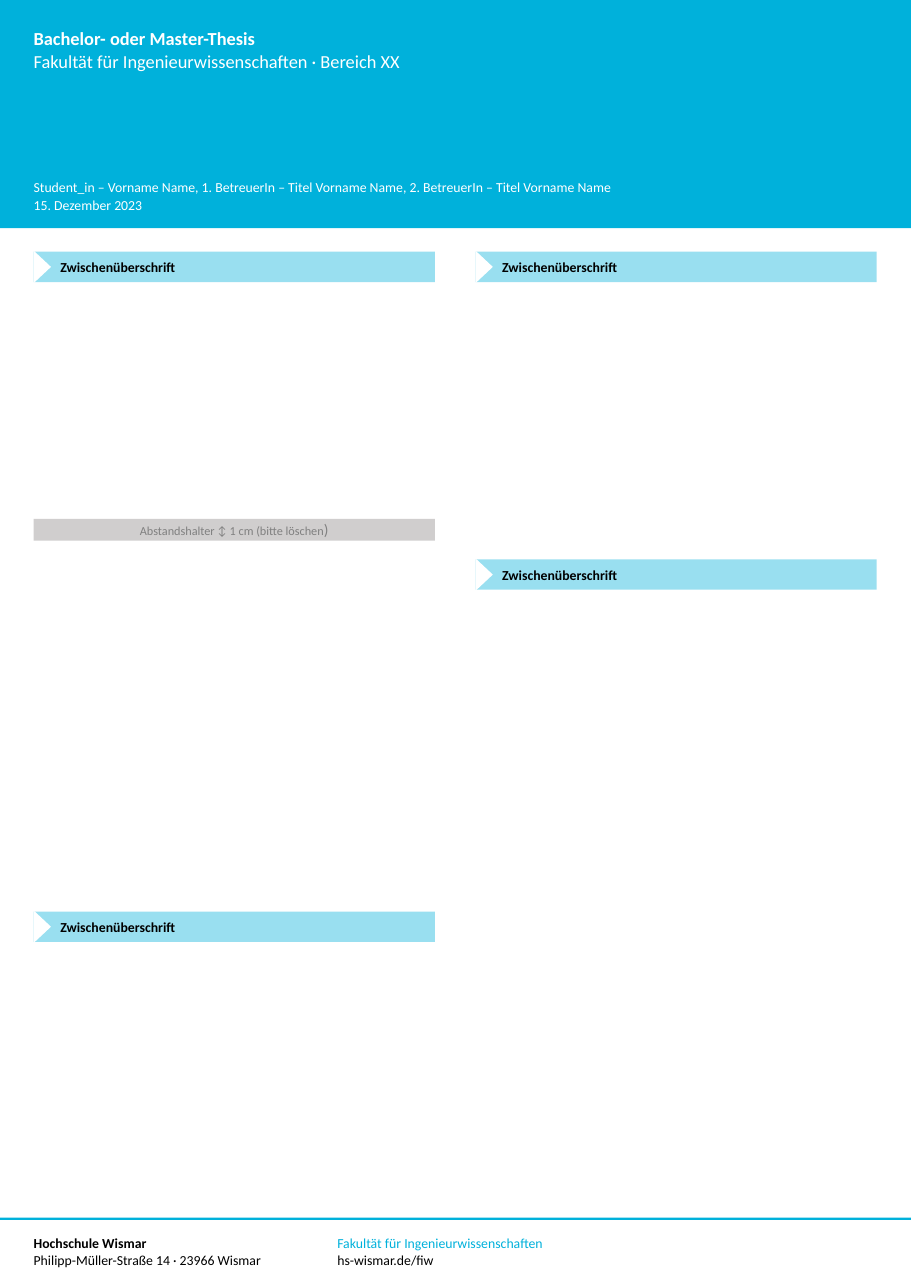
from dataclasses import dataclass

from lxml import etree
from pptx import Presentation
from pptx import util as u
from pptx.dml.color import RGBColor
from pptx.enum import shapes, text
from pptx.oxml.ns import qn


@dataclass(frozen=True)
class Theme:
    font: str = "Calibri"
    accent: str = "00B1DB"
    ink: str = "000000"
    paper: str = "FFFFFF"
    spacer: str = "D0CECE"
    muted: str = "808080"
    title: int = 24
    large: int = 20
    body: int = 18
    note: int = 16
    title_line: int = 30
    author_line: int = 24
    heading_alpha: int = 40


theme = Theme()

TITLE = [
    [("Bachelor- oder Master-Thesis", theme.title, theme.paper, True)],
    [("Fakultät für Ingenieurwissenschaften · Bereich XX", theme.title, theme.paper, False)],
]
AUTHORS = [
    [("Student_in – Vorname Name, 1. BetreuerIn – Titel Vorname Name, "
      "2. BetreuerIn – Titel Vorname Name", theme.body, theme.paper, False)],
    [("15. Dezember 2023", theme.body, theme.paper, False)],
]
SPACER = [[
    ("Abstandshalter ↕ 1 cm (bitte löschen", theme.note, theme.muted, False),
    (")", theme.large, theme.muted, False),
]]
HEADINGS = [
    ("Zwischenüberschrift", 0, 11.61),
    ("Zwischenüberschrift", 1, 11.61),
    ("Zwischenüberschrift", 0, 42.04),
    ("Zwischenüberschrift", 1, 25.8),
]
FOOTER = [
    [[("Hochschule Wismar", theme.body, theme.ink, True)],
     [("Philipp-Müller-Straße 14 · 23966 Wismar", theme.body, theme.ink, False)]],
    [[("Fakultät für Ingenieurwissenschaften", theme.body, theme.accent, False)],
     [("hs-wismar.de/fiw", theme.body, theme.ink, False)]],
]

PAGE_WIDTH, PAGE_HEIGHT = 42, 59.4
MARGIN = 1.55
COLUMN_WIDTH, COLUMN_STEP = 18.5, 20.37
HEADING_HEIGHT, HEADING_INDENT = 1.4, 1.23
NOTCH_BASE, NOTCH_DEPTH = 1.5, 0.8
HEADER_HEIGHT = 10.52
FOOTER_COLUMN, FOOTER_HEIGHT = 14, 2.06


def apply(target, values):
    for name, value in values.items():
        setattr(target, name, value)


def insets(left, top, right, bottom):
    sides = ("margin_left", "margin_top", "margin_right", "margin_bottom")
    return {side: u.Cm(size) for side, size in zip(sides, (left, top, right, bottom))}


def write(frame, paragraphs, **layout):
    for index, runs in enumerate(paragraphs):
        paragraph = frame.add_paragraph() if index else frame.paragraphs[0]
        apply(paragraph, {"alignment": text.PP_ALIGN.LEFT, **layout})
        for words, size, color, bold in runs:
            run = paragraph.add_run()
            run.text = words
            apply(run.font, {"name": theme.font, "size": u.Pt(size), "bold": bold})
            run.font.color.rgb = RGBColor.from_string(color)


def add_area(kind, left, top, width, height, color):
    area = slide.shapes.add_shape(kind, *map(u.Cm, (left, top, width, height)))
    area.shadow.inherit = False
    area.fill.solid()
    area.fill.fore_color.rgb = RGBColor.from_string(color)
    area.line.fill.background()
    return area


def add_text(left, top, width, height, paragraphs, frame_format, line):
    frame = slide.shapes.add_textbox(*map(u.Cm, (left, top, width, height))).text_frame
    apply(frame, {"word_wrap": True, **frame_format})
    write(frame, paragraphs, line_spacing=u.Pt(line))


def add_heading(words, column, top):
    left = MARGIN + column * COLUMN_STEP
    bar = add_area(RECTANGLE, left, top, COLUMN_WIDTH, HEADING_HEIGHT, theme.accent)
    tint = bar.fill._xPr.find(".//" + qn("a:srgbClr"))
    etree.SubElement(tint, qn("a:alpha"), val=str(theme.heading_alpha * 1000))
    apply(bar.text_frame, {"vertical_anchor": text.MSO_ANCHOR.MIDDLE,
                           **insets(HEADING_INDENT, 0.13, 0.25, 0.13)})
    write(bar.text_frame, [[(words, theme.body, theme.ink, True)]])
    notch = add_area(shapes.MSO_SHAPE.ISOSCELES_TRIANGLE,
                     left + (NOTCH_DEPTH - NOTCH_BASE) / 2,
                     top + (HEADING_HEIGHT - NOTCH_DEPTH) / 2,
                     NOTCH_BASE, NOTCH_DEPTH, theme.paper)
    notch.rotation = 90


RECTANGLE = shapes.MSO_SHAPE.RECTANGLE
deck = Presentation()
apply(deck, {"slide_width": u.Cm(PAGE_WIDTH), "slide_height": u.Cm(PAGE_HEIGHT)})
slide = deck.slides.add_slide(deck.slide_layouts[6])

add_area(RECTANGLE, 0, 56.16, PAGE_WIDTH, 0.1, theme.accent)
add_area(RECTANGLE, 0, 0, PAGE_WIDTH, HEADER_HEIGHT, theme.accent)

contact = slide.shapes.add_table(
    1, len(FOOTER), u.Cm(MARGIN), u.Cm(56.49),
    u.Cm(FOOTER_COLUMN * len(FOOTER)), u.Cm(FOOTER_HEIGHT)).table
apply(contact, {"first_row": False, "horz_banding": False})
for cell, paragraphs in zip(contact.rows[0].cells, FOOTER):
    cell.fill.background()
    apply(cell, insets(0, 0.5, 0, 0))
    write(cell.text_frame, paragraphs)

add_text(MARGIN, 0.91, 32.33, 2.62, TITLE,
         {"vertical_anchor": text.MSO_ANCHOR.BOTTOM, **insets(0, 0, 0, 0.2)},
         theme.title_line)
add_text(MARGIN, 8.03, 31.42, 1.96, AUTHORS,
         {"auto_size": text.MSO_AUTO_SIZE.SHAPE_TO_FIT_TEXT, **insets(0, 0.13, 0, 0.13)},
         theme.author_line)

spacer = add_area(RECTANGLE, MARGIN, 23.93, COLUMN_WIDTH, 1, theme.spacer)
spacer.text_frame.vertical_anchor = text.MSO_ANCHOR.MIDDLE
write(spacer.text_frame, SPACER, alignment=text.PP_ALIGN.CENTER)

for heading in HEADINGS:
    add_heading(*heading)

deck.save("out.pptx")
